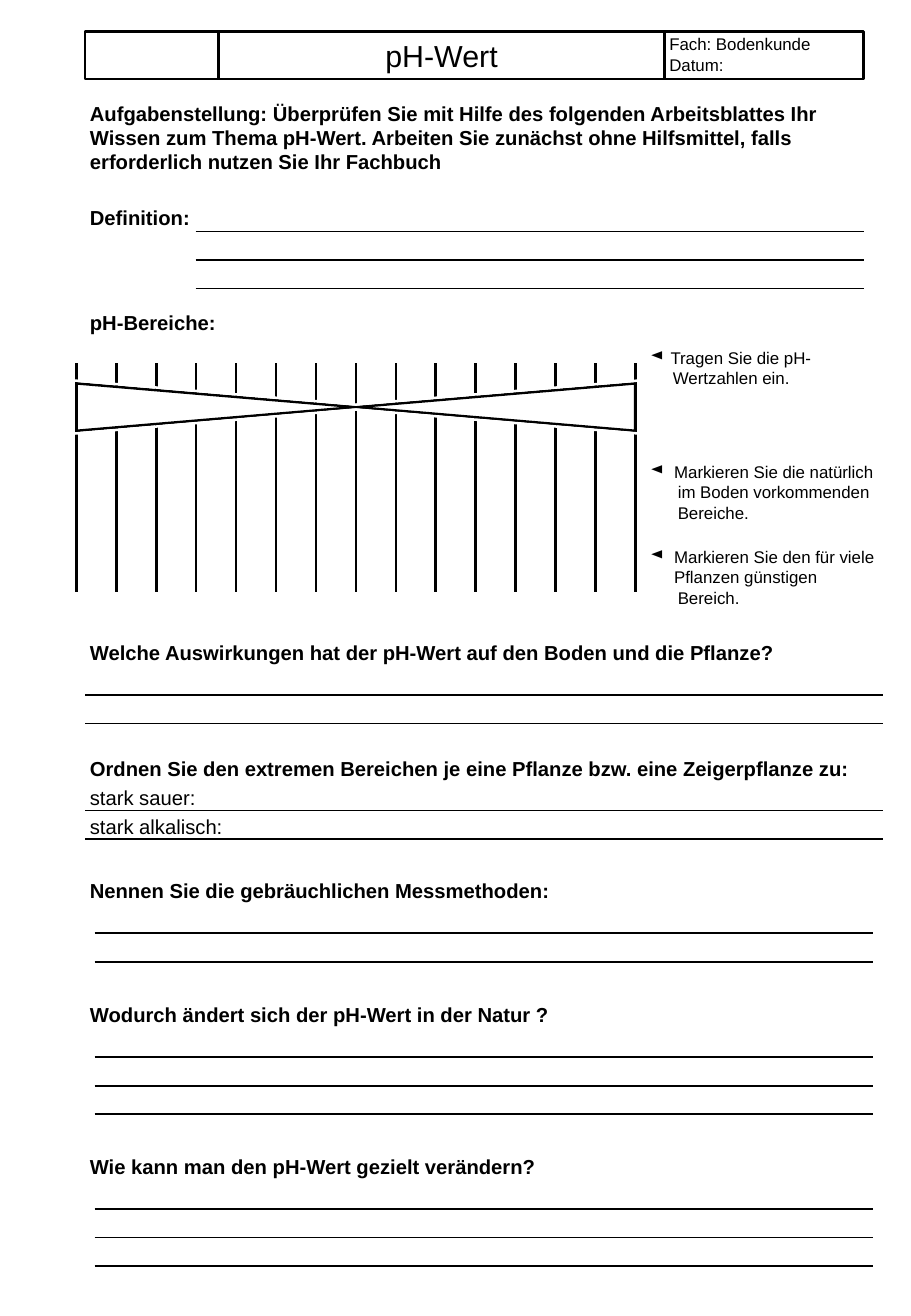
from lxml import etree
from pptx import Presentation
from pptx.dml.color import RGBColor
from pptx.enum import shapes, text
from pptx.oxml import ns
from pptx.util import Inches, Pt

BLACK = "000000"
WHITE = "FFFFFF"
LINE_PITCH = 0.47 / 2
BAR_COUNT = 15

HINTS = [
    (2.84, 0.55, [("Tragen Sie die pH-", 0.17), ("Wertzahlen ein.", 0.19)]),
    (3.78, 0.63, [("Markieren Sie die natürlich", 0.2),
                  ("im Boden vorkommenden", 0.23), ("Bereiche.", 0.23)]),
    (4.48, 0.63, [("Markieren Sie den für viele", 0.2),
                  ("Pflanzen günstigen", 0.2), ("Bereich.", 0.23)]),
]

QUESTIONS = [
    (5.25, "Welche Auswirkungen hat der pH-Wert auf den Boden und die Pflanze?", 0.7, 6.57, 2),
    (6.2, "Ordnen Sie den extremen Bereichen je eine Pflanze bzw. eine Zeigerpflanze zu:", 0.7, 6.57, 2),
    (7.21, "Nennen Sie die gebräuchlichen Messmethoden:", 0.78, 6.41, 2),
    (8.23, "Wodurch ändert sich der pH-Wert in der Natur ?", 0.78, 6.41, 3),
    (9.48, "Wie kann man den pH-Wert gezielt verändern?", 0.78, 6.41, 3),
]


def color(value):
    return RGBColor.from_string(value)


def outline(shape, value=BLACK):
    shape.shadow.inherit = False
    shape.line.color.rgb = color(value)
    shape.line.width = Pt(1.5)


def fill(shape):
    shape.fill.solid()
    shape.fill.fore_color.rgb = color(WHITE)


def format_font(paragraph, size, bold=False):
    paragraph.font.name = "Arial"
    paragraph.font.size = Pt(size)
    paragraph.font.bold = bold
    paragraph.font.color.rgb = color(BLACK)


def add_text(slide, left, top, width, height, lines, size=12, bold=False):
    box = slide.shapes.add_textbox(Inches(left), Inches(top), Inches(width), Inches(height))
    frame = box.text_frame
    frame.word_wrap = True
    frame.margin_left = frame.margin_right = Inches(0.04)
    frame.margin_top = frame.margin_bottom = Inches(0.02)
    frame.text = "\n".join(lines)
    for paragraph in frame.paragraphs:
        format_font(paragraph, size, bold)
    return box


def add_line(slide, x1, y1, x2, y2, width):
    line = slide.shapes.add_connector(
        shapes.MSO_CONNECTOR.STRAIGHT, Inches(x1), Inches(y1), Inches(x2), Inches(y2))
    line.line.color.rgb = color(BLACK)
    line.line.width = Pt(width)
    etree.SubElement(line._element.spPr, ns.qn("a:effectLst"))


def add_writing_lines(slide, left, top, width, count):
    for index in range(count):
        y = top + index * LINE_PITCH
        add_line(slide, left, y, left + width, y, 1)


def add_header(slide, left, top, height):
    logo_width, title_width, subject_width = 1.1, 3.67, 1.64
    logo_field = slide.shapes.add_shape(
        shapes.MSO_SHAPE.RECTANGLE, Inches(left), Inches(top), Inches(logo_width), Inches(height))
    fill(logo_field)
    outline(logo_field)

    title = slide.shapes.title
    title.left, title.top = Inches(left + logo_width), Inches(top)
    title.width, title.height = Inches(title_width), Inches(height)
    title.text_frame.text = "pH-Wert"
    title.text_frame.vertical_anchor = text.MSO_ANCHOR.MIDDLE
    title.text_frame.paragraphs[0].alignment = text.PP_ALIGN.CENTER
    format_font(title.text_frame.paragraphs[0], 18)
    fill(title)
    outline(title)

    subject = add_text(slide, left + logo_width + title_width, top, subject_width, height,
                       ["Fach: Bodenkunde", "Datum:"], 10)
    fill(subject)
    outline(subject)


def add_mask(slide, points):
    builder = slide.shapes.build_freeform(Inches(points[0][0]), Inches(points[0][1]))
    builder.add_line_segments([(Inches(x), Inches(y)) for x, y in points[1:]], close=False)
    mask = builder.convert_to_shape()
    mask.fill.background()
    outline(mask, WHITE)


def add_ph_scale(slide, left, top, width, height):
    for index in range(BAR_COUNT):
        x = left + index * width / (BAR_COUNT - 1)
        add_line(slide, x, top, x, top + height, 1.5)

    thickness = 0.39
    center_x, center_y = left + width / 2, top + 0.36
    wedge = slide.shapes.add_shape(
        shapes.MSO_SHAPE.FLOWCHART_COLLATE,
        Inches(center_x - thickness / 2), Inches(center_y - width / 2),
        Inches(thickness), Inches(width))
    wedge.rotation = 90
    fill(wedge)
    outline(wedge)

    start, end = left - 0.04, left + width + 0.05
    for direction in (-1, 1):
        outer, inner = center_y + direction * 0.22, center_y + direction * 0.02
        add_mask(slide, [(start, outer), (center_x, inner), (end, outer)])


def add_hint(slide, left, top, width, height, lines):
    box = add_text(slide, left, top, width, height, [line for line, _ in lines], 10)
    for index, (paragraph, (_, margin)) in enumerate(zip(box.text_frame.paragraphs, lines)):
        properties = paragraph._p.get_or_add_pPr()
        properties.set("marL", str(Inches(margin)))
        properties.set("indent", str(-Inches(margin) if index == 0 else 0))
        if index == 0:
            bullet = etree.Element(ns.qn("a:buChar"), char="◄")
            properties.insert(0, bullet)


def add_question(slide, top, question, line_left, line_width, line_count):
    add_text(slide, 0.7, top, 6.56, 0.31, [question], bold=True)
    add_writing_lines(slide, line_left, top + 2 * LINE_PITCH, line_width, line_count)


def add_definition(slide, left, top, width):
    add_text(slide, left, top, width, 0.31, ["Definition:"], bold=True)
    add_writing_lines(slide, left + 0.91, top + LINE_PITCH, width - 0.91, 3)


def add_extremes(slide, left, top, width, height):
    box = add_text(slide, left, top, width, height, ["stark sauer:", "stark alkalisch:"])
    box.text_frame.paragraphs[1].space_before = Pt(3)


def main():
    presentation = Presentation()
    presentation.slide_width = Inches(7.5)
    presentation.slide_height = Inches(10.83)
    slide = presentation.slides.add_slide(presentation.slide_layouts[5])

    add_header(slide, 0.7, 0.26, 0.39)
    add_text(slide, 0.7, 0.81, 6.41, 0.7, [
        "Aufgabenstellung: Überprüfen Sie mit Hilfe des folgenden Arbeitsblattes Ihr "
        "Wissen zum Thema pH-Wert. Arbeiten Sie zunächst ohne Hilfsmittel, falls "
        "erforderlich nutzen Sie Ihr Fachbuch"], bold=True)
    add_definition(slide, 0.7, 1.67, 6.41)
    add_text(slide, 0.7, 2.53, 6.64, 0.31, ["pH-Bereiche:"], bold=True)
    add_ph_scale(slide, 0.63, 2.99, 4.6, 1.88)
    for top, height, lines in HINTS:
        add_hint(slide, 5.31, top, 1.95, height, lines)
    for question in QUESTIONS:
        add_question(slide, *question)
    add_extremes(slide, 0.7, 6.44, 6.56, 0.55)

    presentation.save("out.pptx")


if __name__ == "__main__":
    main()
